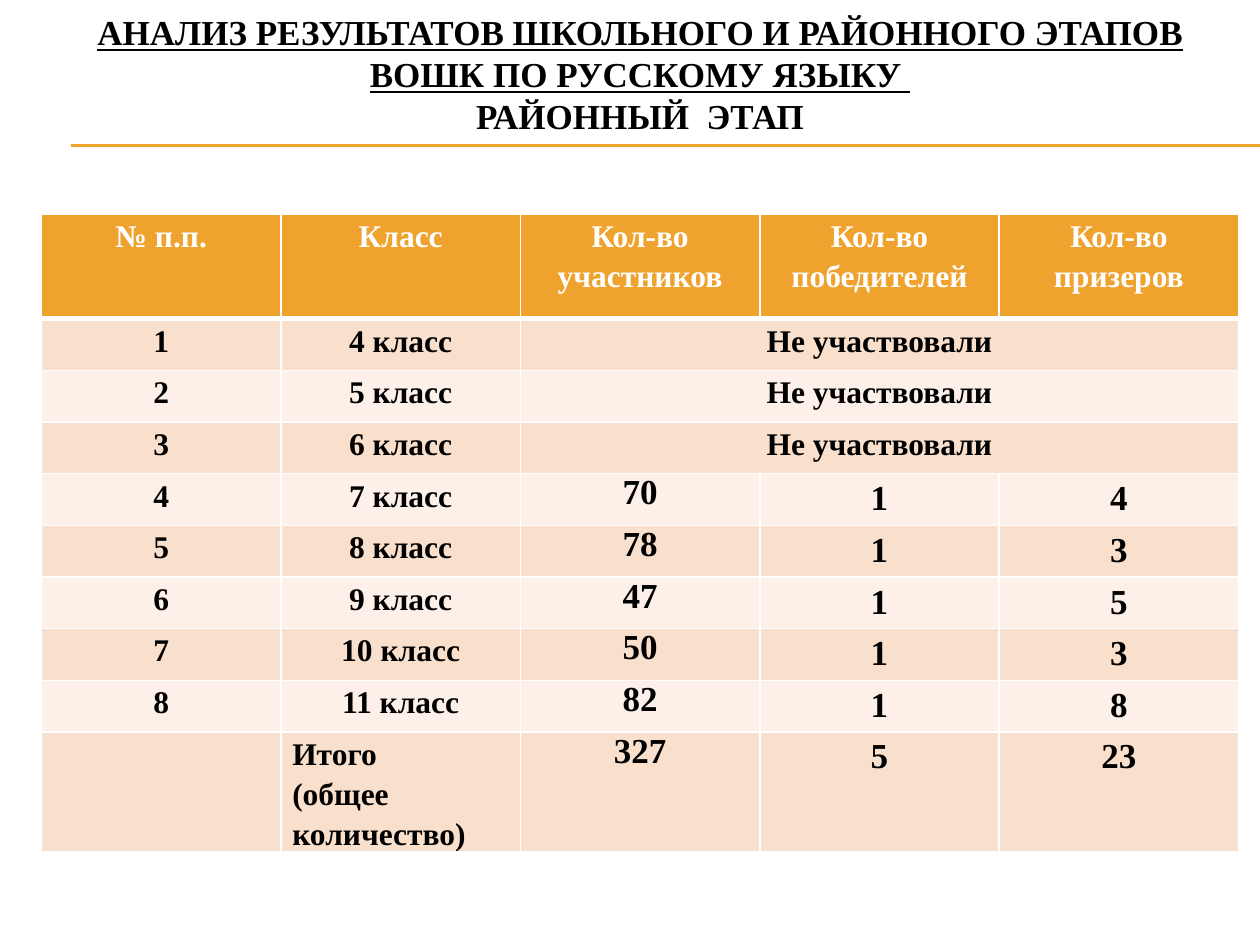
"""Build the slide with district-stage results of the Russian language olympiad."""
import copy

import lxml.etree
import pptx
import pptx.dml.color
import pptx.enum.shapes
import pptx.enum.text
import pptx.oxml.ns
import pptx.util
from pptx.util import Inches

ALIGN = pptx.enum.text.PP_ALIGN


def color(hex_value):
    """Turn a hex string into a colour."""
    return pptx.dml.color.RGBColor.from_string(hex_value)


def write(paragraph, text, size=18, ink="000000", underline=False, align=ALIGN.CENTER, spacing=None):
    """Add one formatted run to a paragraph."""
    paragraph.alignment = align
    if spacing:
        paragraph.line_spacing = spacing
    run = paragraph.add_run()
    run.text = text
    run.font.name = "Times New Roman"
    run.font.size = pptx.util.Pt(size)
    run.font.bold = True
    run.font.underline = underline
    run.font.color.rgb = color(ink)
    return run


presentation = pptx.Presentation()
presentation.slide_width = Inches(10)
presentation.slide_height = Inches(7.5)
slide = presentation.slides.add_slide(presentation.slide_layouts[5])

for rule_y in (1.15, 1.16):
    rule = slide.shapes.add_connector(
        pptx.enum.shapes.MSO_CONNECTOR.STRAIGHT,
        Inches(0.56), Inches(rule_y), Inches(10), Inches(rule_y))
    rule.line.color.rgb = color("F0A22E")
    rule.line.width = pptx.util.Pt(0.75)
    lxml.etree.SubElement(rule._element.spPr, pptx.oxml.ns.qn("a:effectLst"))

title = slide.shapes.title
title.left, title.top = Inches(0.33), Inches(0)
title.width, title.height = Inches(9.5), Inches(1.17)
title.text_frame.vertical_anchor = pptx.enum.text.MSO_ANCHOR.MIDDLE
title.text_frame.word_wrap = True
heading = title.text_frame.paragraphs[0]
olympiad = write(heading, "АНАЛИЗ РЕЗУЛЬТАТОВ ШКОЛЬНОГО И РАЙОННОГО ЭТАПОВ ВОШК ПО РУССКОМУ ЯЗЫКУ ",
                 size=20, underline=True)
heading.add_line_break()
heading._p[-1].append(copy.deepcopy(olympiad._r.rPr))
write(heading, "РАЙОННЫЙ  ЭТАП", size=20)

absent = "Не участвовали"
results = [
    ["№ п.п.", "Класс", "Кол-во участников", "Кол-во победителей", "Кол-во призеров"],
    ["1", "4 класс", absent, "", ""],
    ["2", "5 класс", absent, "", ""],
    ["3", "6 класс", absent, "", ""],
    ["4", "7 класс", "70", "1", "4"],
    ["5", "8 класс", "78", "1", "3"],
    ["6", "9 класс", "47", "1", "5"],
    ["7", "10 класс", "50", "1", "3"],
    ["8", "11 класс", "82", "1", "8"],
    ["", "Итого\n(общее количество)", "327", "5", "23"],
]
table = slide.shapes.add_table(
    len(results), 5, Inches(0.33), Inches(1.7), Inches(9.5), Inches(4.52)).table
for column in table.columns:
    column.width = Inches(1.9)

for row_index, row in enumerate(results):
    table.rows[row_index].height = Inches(0.41 if row_index else 0.83)
    if row[2] == absent:
        table.cell(row_index, 2).merge(table.cell(row_index, 4))
    for column_index, text in enumerate(row):
        cell = table.cell(row_index, column_index)
        cell.margin_left = cell.margin_right = Inches(0.09)
        cell.margin_top = cell.margin_bottom = 0
        for side in ("L", "R", "T", "B"):
            thick = (row_index, side) in ((0, "B"), (1, "T"))
            border = lxml.etree.SubElement(
                cell._tc.get_or_add_tcPr(), pptx.oxml.ns.qn("a:ln" + side),
                w=str(pptx.util.Pt(3 if thick else 1)))
            border_fill = lxml.etree.SubElement(border, pptx.oxml.ns.qn("a:solidFill"))
            lxml.etree.SubElement(border_fill, pptx.oxml.ns.qn("a:srgbClr"), val="FFFFFF")
        cell.fill.solid()
        band = "F9E0CD" if row_index % 2 else "FCF0E8"
        if row_index == 0:
            band = "F0A22E"
        elif row_index == len(results) - 1:
            band = "F9E0CD"
        cell.fill.fore_color.rgb = color(band)
        if not text:
            continue
        is_count = column_index >= 2 and text.isdigit()
        for line_index, line in enumerate(text.split("\n")):
            paragraph = cell.text_frame.add_paragraph() if line_index else cell.text_frame.paragraphs[0]
            write(paragraph, line,
                  size=20 if is_count else 18,
                  ink="000000" if row_index else "FFFFFF",
                  align=ALIGN.LEFT if "\n" in text else ALIGN.CENTER,
                  spacing=None if is_count and column_index == 2 else 1.15)

presentation.save("out.pptx")
